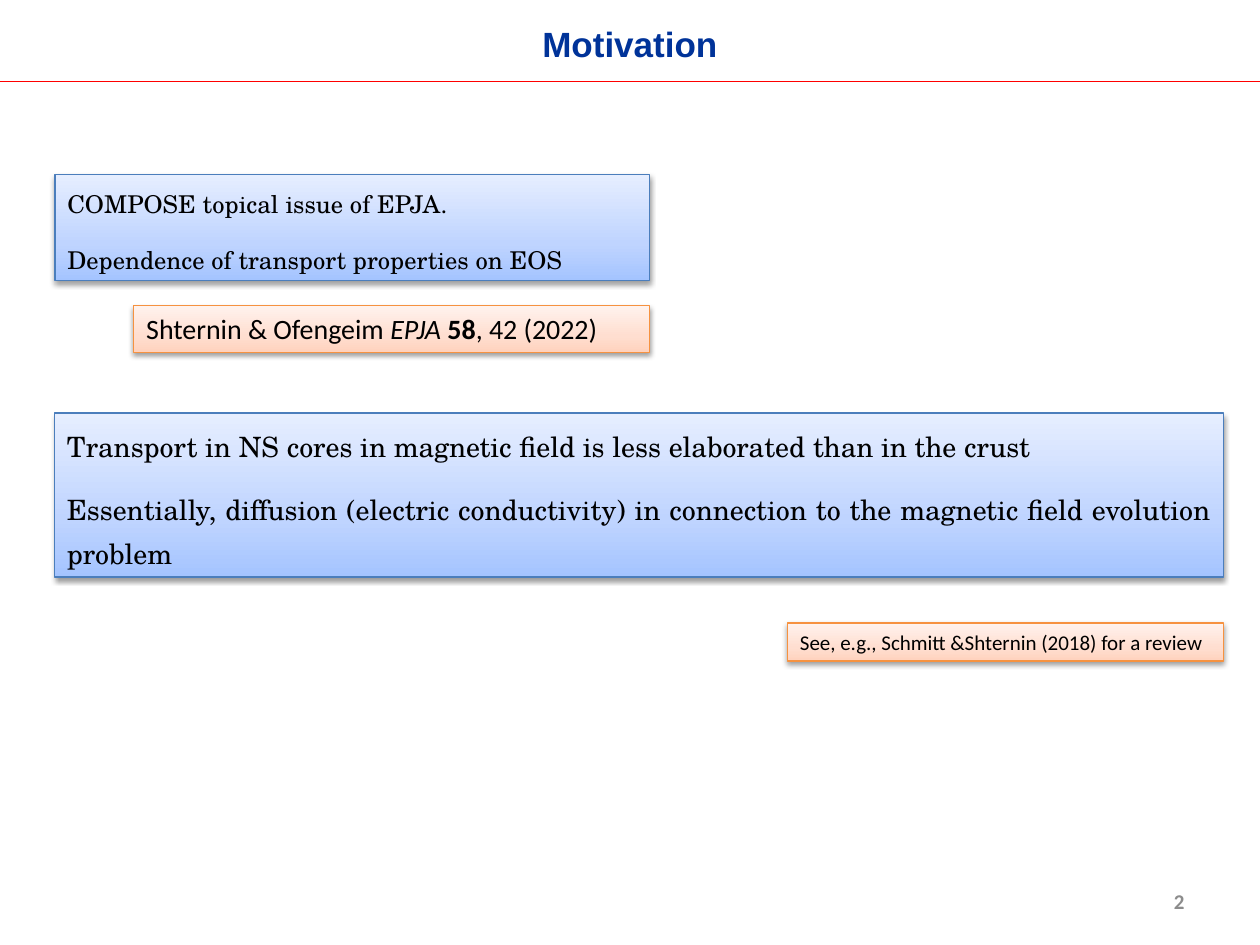
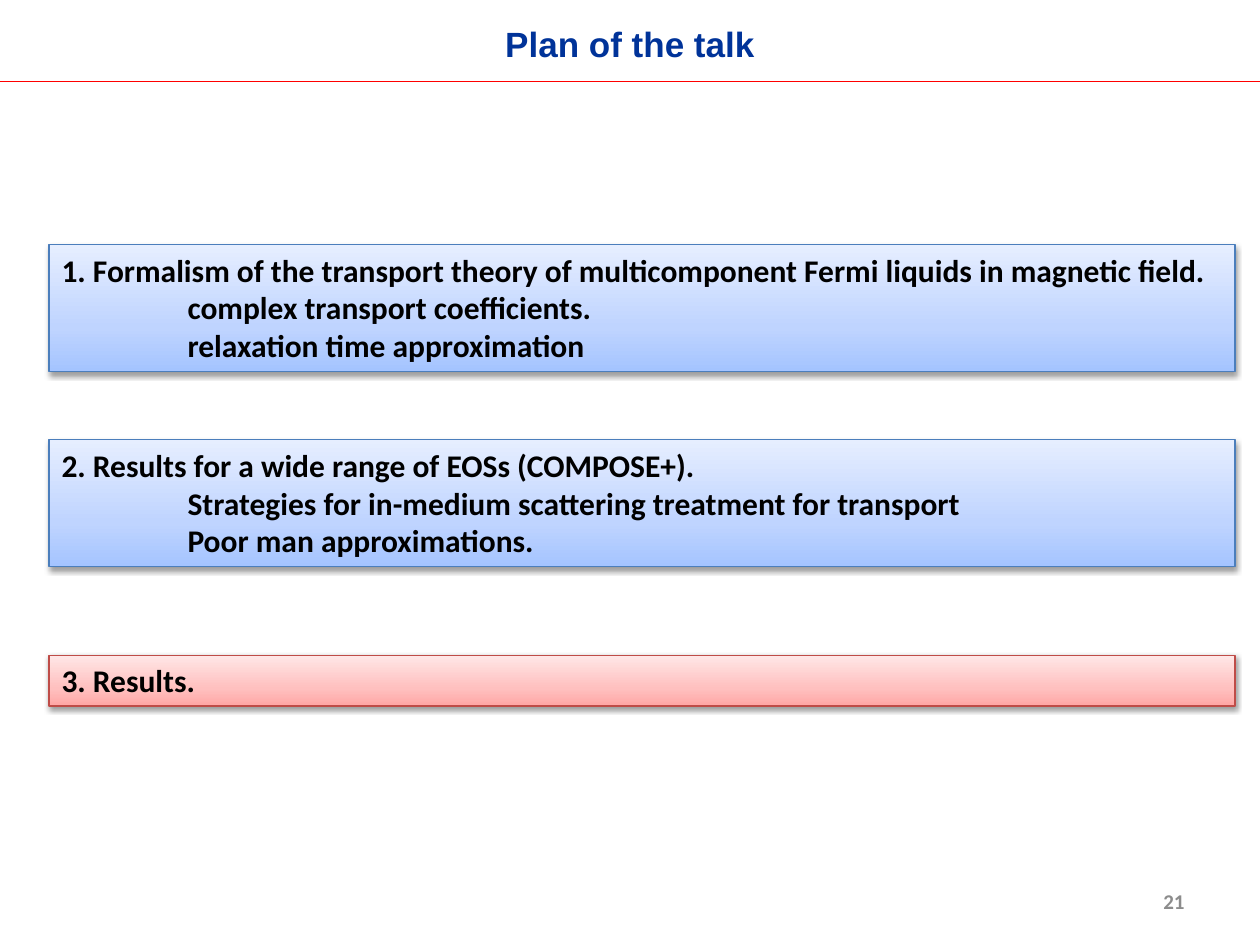
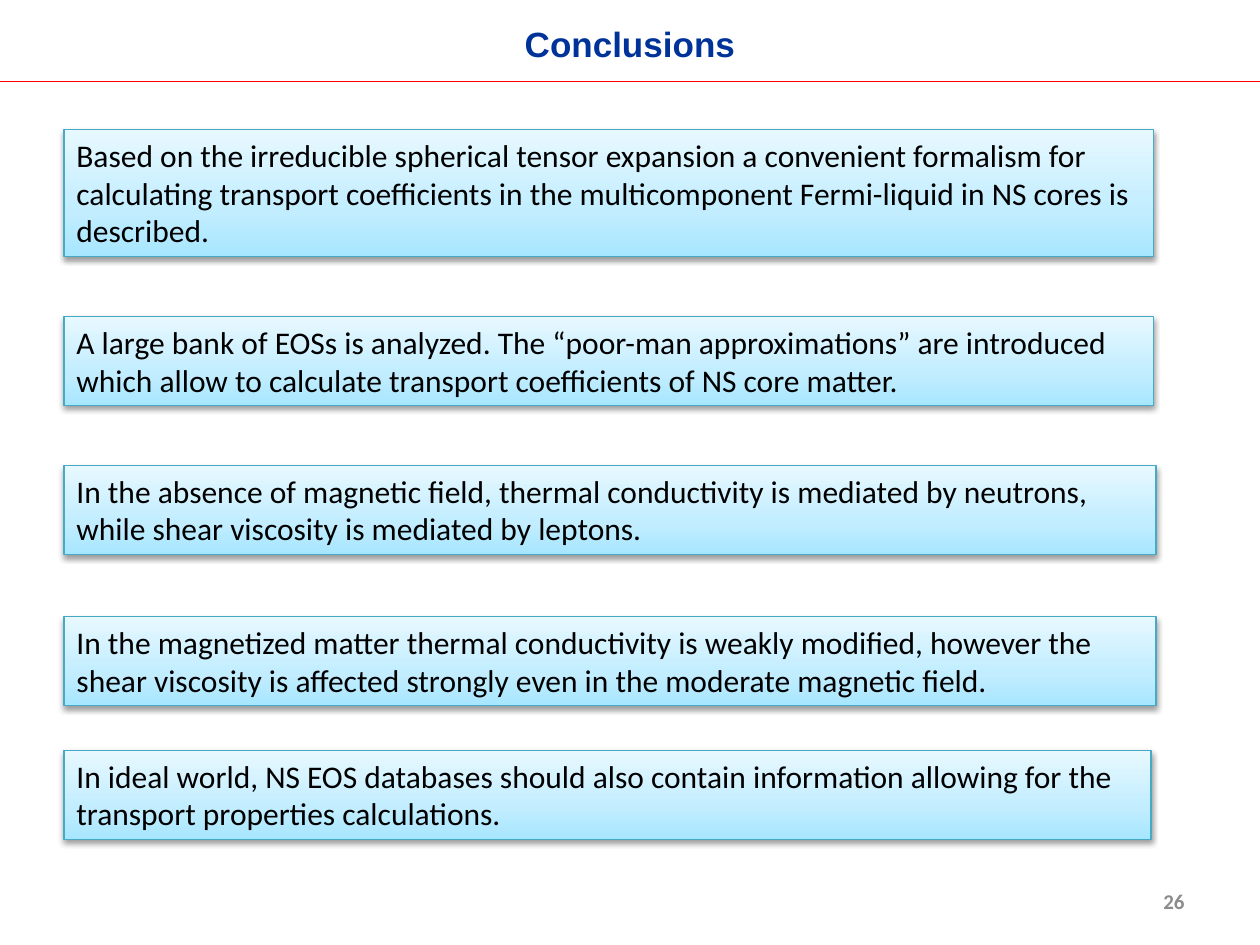
"""Builds three slides of a talk on transport properties of neutron star cores."""
from collections import namedtuple
from copy import deepcopy

from lxml.etree import SubElement
from pptx import Presentation
from pptx.dml.color import RGBColor
from pptx.enum.shapes import MSO_CONNECTOR as CONNECTOR, MSO_SHAPE as SHAPE
from pptx.enum.text import MSO_ANCHOR as ANCHOR, PP_ALIGN as ALIGN
from pptx.oxml.ns import qn
from pptx.util import Pt

SLIDE_WIDTH, SLIDE_HEIGHT = 720, 540
SANS, SERIF, TITLE_FONT = "Calibri", "TeX Gyre Schola", "Arial"

BLACK = RGBColor(0x00, 0x00, 0x00)
NAVY = RGBColor(0x00, 0x33, 0x99)
RED = RGBColor(0xFF, 0x00, 0x00)
GREY = RGBColor(0x8C, 0x8C, 0x8C)

Theme = namedtuple("Theme", "bottom middle top border")
BLUE = Theme(RGBColor(0xA4, 0xC4, 0xFF), RGBColor(0xBF, 0xD4, 0xFF),
             RGBColor(0xE6, 0xEE, 0xFF), RGBColor(0x4B, 0x7E, 0xBC))
ORANGE = Theme(RGBColor(0xFF, 0xD2, 0xBD), RGBColor(0xFF, 0xDE, 0xD0),
               RGBColor(0xFF, 0xF2, 0xED), RGBColor(0xF6, 0x92, 0x40))
ROSE = Theme(RGBColor(0xFF, 0xA6, 0xA5), RGBColor(0xFF, 0xC0, 0xBF),
             RGBColor(0xFF, 0xE7, 0xE7), RGBColor(0xBF, 0x4C, 0x48))
AQUA = Theme(RGBColor(0xA7, 0xE6, 0xFF), RGBColor(0xC1, 0xED, 0xFF),
             RGBColor(0xE7, 0xF8, 0xFF), RGBColor(0x46, 0xAA, 0xC5))
STOP_POSITIONS = (0, 0.35, 1)


def add_run(paragraph, text, size, font=SANS, color=BLACK, bold=False, italic=False):
    """Append one formatted run."""
    run = paragraph.add_run()
    run.text = text
    run.font.name = font
    run.font.size = Pt(size)
    run.font.bold = bold
    run.font.italic = italic
    run.font.color.rgb = color


def next_paragraph(frame, align):
    """Return the empty first paragraph, or a new one, with its alignment set."""
    first = frame.paragraphs[0]
    paragraph = frame.add_paragraph() if first.runs else first
    paragraph.alignment = align
    return paragraph


def add_label(slide, box, text, align, anchor=ANCHOR.TOP, **style):
    """Add a one-paragraph text box."""
    frame = slide.shapes.add_textbox(*map(Pt, box)).text_frame
    frame.word_wrap = True
    frame.vertical_anchor = anchor
    add_run(next_paragraph(frame, align), text, **style)


def add_titled_slide(presentation, title, number):
    """Add a slide with its title, red rule and page number."""
    slide = presentation.slides.add_slide(presentation.slide_layouts[6])
    add_label(slide, (0, 9.4, SLIDE_WIDTH, 31), title, ALIGN.CENTER,
              size=20, font=TITLE_FONT, color=NAVY, bold=True)
    rule = slide.shapes.add_connector(
        CONNECTOR.STRAIGHT, 0, Pt(46.6), Pt(SLIDE_WIDTH), Pt(46.6))
    rule.line.color.rgb = RED
    rule.line.width = Pt(0.75)
    SubElement(rule._element.spPr, qn("a:effectLst"))
    add_label(slide, (516, 500.5, 168, 28.8), str(number), ALIGN.RIGHT, ANCHOR.MIDDLE,
              size=12, color=GREY, bold=True)
    return slide


def add_shadow(shape):
    """Give a shape a soft shadow straight below it."""
    shape.shadow.inherit = False
    effects = shape._element.spPr.find(qn("a:effectLst"))
    shadow = SubElement(effects, qn("a:outerShdw"), blurRad=str(Pt(3.1)),
                        dist=str(Pt(1.6)), dir="5400000", rotWithShape="0")
    color = SubElement(shadow, qn("a:srgbClr"), val=str(BLACK))
    SubElement(color, qn("a:alpha"), val="38000")


def add_panel(slide, box, theme):
    """Add a gradient panel and return its text frame."""
    panel = slide.shapes.add_shape(SHAPE.RECTANGLE, *map(Pt, box))
    panel.fill.gradient()
    panel.fill.gradient_angle = 90
    stop_list = panel._element.spPr.find(".//" + qn("a:gsLst"))
    stop_list.append(deepcopy(stop_list[0]))
    for stop, position, color in zip(panel.fill.gradient_stops, STOP_POSITIONS, theme):
        stop.position = position
        stop.color.rgb = color
    panel.line.color.rgb = theme.border
    panel.line.width = Pt(0.75)
    add_shadow(panel)
    frame = panel.text_frame
    frame.word_wrap = True
    frame.vertical_anchor = ANCHOR.TOP
    return frame


def add_statements(slide, box, size, statements):
    """Add a blue panel of widely spaced serif paragraphs."""
    frame = add_panel(slide, box, BLUE)
    for statement in statements:
        paragraph = next_paragraph(frame, ALIGN.JUSTIFY)
        paragraph.line_spacing = 1.3
        paragraph.space_after = Pt(0.7 * size)
        add_run(paragraph, statement, size, SERIF)


def add_reference(slide, box, size, parts):
    """Add an orange panel with a citation made of (text, style) parts."""
    paragraph = next_paragraph(add_panel(slide, box, ORANGE), ALIGN.LEFT)
    for text, style in parts:
        add_run(paragraph, text, size, **style)


def add_plan_item(slide, top, height, theme, heading, *details):
    """Add a plan panel with a heading and indented details."""
    frame = add_panel(slide, (28.1, top, 677.7, height), theme)
    add_run(next_paragraph(frame, ALIGN.JUSTIFY), heading, 18, bold=True)
    for detail in details:
        paragraph = next_paragraph(frame, ALIGN.JUSTIFY)
        paragraph._p.get_or_add_pPr().set("marL", str(Pt(72)))
        add_run(paragraph, detail, 18, bold=True)


def add_conclusion(slide, top, width, height, text):
    """Add an aqua panel with one conclusion."""
    frame = add_panel(slide, (36.6, top, width, height), AQUA)
    add_run(next_paragraph(frame, ALIGN.LEFT), text, 18)


def build_motivation(presentation):
    """Build the motivation slide."""
    slide = add_titled_slide(presentation, "Motivation", 2)
    add_statements(slide, (31.4, 99.7, 339.8, 60.8), 14, [
        "COMPOSE topical issue of EPJA.",
        "Dependence of transport properties on EOS"])
    add_statements(slide, (31.1, 236, 668.2, 93.7), 16, [
        "Transport in NS cores in magnetic field is less elaborated than in the crust",
        "Essentially, diffusion (electric conductivity) in connection to the magnetic "
        "field evolution problem"])
    add_reference(slide, (76.5, 174.6, 294.7, 26.7), 16, [
        ("Shternin & Ofengeim ", {}), ("EPJA ", {"italic": True}),
        ("58", {"bold": True}), (", 42 (2022)", {})])
    add_reference(slide, (450, 356, 249.2, 21.8), 12, [
        ("See, e.g., Schmitt &Shternin (2018) for a review", {})])


def build_plan(presentation):
    """Build the plan slide."""
    slide = add_titled_slide(presentation, "Plan of the talk", 21)
    add_plan_item(
        slide, 139.7, 72.7, BLUE,
        "1. Formalism of the transport theory of multicomponent Fermi liquids in "
        "magnetic field.",
        "complex transport coefficients.", "relaxation time approximation")
    add_plan_item(
        slide, 251.2, 72.7, BLUE, "2. Results for a wide range of EOSs (COMPOSE+).",
        "Strategies for in-medium scattering treatment for transport",
        "Poor man approximations.")
    add_plan_item(slide, 374.4, 29.1, ROSE, "3. Results.")


def build_conclusions(presentation):
    """Build the conclusions slide."""
    slide = add_titled_slide(presentation, "Conclusions", 26)
    conclusions = [
        (74, 622.6, 72.7,
         "Based on the irreducible spherical tensor expansion a convenient formalism for "
         "calculating transport coefficients in the multicomponent Fermi-liquid in NS "
         "cores is described."),
        (181, 622.6, 50.9,
         "A large bank of EOSs is analyzed. The “poor-man approximations” are introduced "
         "which allow to calculate transport coefficients of NS core matter."),
        (266, 624, 50.9,
         "In the absence of magnetic field, thermal conductivity is mediated by neutrons, "
         "while shear viscosity is mediated by leptons."),
        (352.4, 624, 50.9,
         "In the magnetized matter thermal conductivity is weakly modified, however the "
         "shear viscosity is affected strongly even in the moderate magnetic field."),
        (428.8, 621.2, 50.9,
         "In ideal world, NS EOS databases should also contain information allowing for "
         "the transport properties calculations."),
    ]
    for conclusion in conclusions:
        add_conclusion(slide, *conclusion)


def main():
    """Build and save the presentation."""
    presentation = Presentation()
    presentation.slide_width = Pt(SLIDE_WIDTH)
    presentation.slide_height = Pt(SLIDE_HEIGHT)
    build_motivation(presentation)
    build_plan(presentation)
    build_conclusions(presentation)
    presentation.save("out.pptx")


if __name__ == "__main__":
    main()
